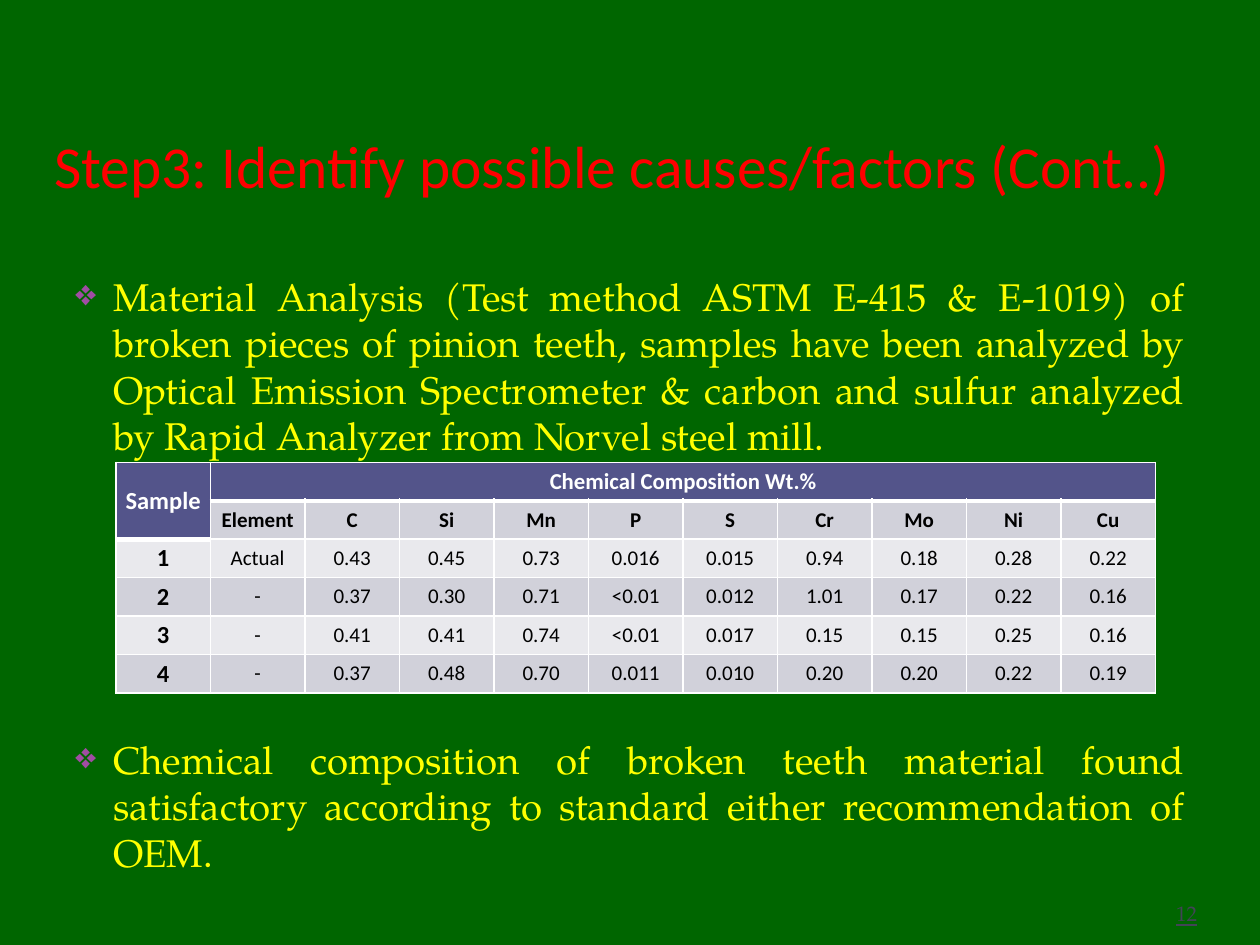
from lxml.etree import SubElement
from pptx import Presentation
from pptx.dml.color import RGBColor
from pptx.enum.text import MSO_ANCHOR, PP_ALIGN
from pptx.oxml.ns import qn
from pptx.util import Inches, Pt

HEADING_FONT = "Calibri"
BODY_FONT = "TeX Gyre Pagella"
HEADER_FILL, DARK_BAND, LIGHT_BAND = "53548A", "D1D1DA", "E9E9ED"

FINDINGS = [
    "Material Analysis (Test method ASTM E-415 & E-1019) of broken pieces of pinion teeth, "
    "samples have been analyzed by Optical Emission Spectrometer & carbon and sulfur "
    "analyzed by Rapid Analyzer from Norvel steel mill.",
    "Chemical composition of broken teeth material found satisfactory according to "
    "standard either recommendation of OEM.",
]
COMPOSITION = [
    ["Sample", "Chemical Composition Wt.%"] + [""] * 9,
    ["", "Element", "C", "Si", "Mn", "P", "S", "Cr", "Mo", "Ni", "Cu"],
    ["1", "Actual", "0.43", "0.45", "0.73", "0.016", "0.015", "0.94", "0.18", "0.28", "0.22"],
    ["2", "-", "0.37", "0.30", "0.71", "<0.01", "0.012", "1.01", "0.17", "0.22", "0.16"],
    ["3", "-", "0.41", "0.41", "0.74", "<0.01", "0.017", "0.15", "0.15", "0.25", "0.16"],
    ["4", "-", "0.37", "0.48", "0.70", "0.011", "0.010", "0.20", "0.20", "0.22", "0.19"],
]


def color(hex_string):
    return RGBColor.from_string(hex_string)


def format_paragraph(paragraph, font_name, size, hex_color, alignment, bold=False):
    paragraph.alignment = alignment
    for run in paragraph.runs:
        run.font.name = font_name
        run.font.size = Pt(size)
        run.font.bold = bold
        run.font.color.rgb = color(hex_color)


def add_text_frame(slide, left, top, width, height):
    shape = slide.shapes.add_textbox(Inches(left), Inches(top), Inches(width), Inches(height))
    shape.text_frame.word_wrap = True
    return shape.text_frame


def add_title(slide, text):
    text_frame = add_text_frame(slide, 0.33, 0.67, 9.17, 0.92)
    text_frame.margin_left = text_frame.margin_right = text_frame.margin_bottom = 0
    text_frame.vertical_anchor = MSO_ANCHOR.BOTTOM
    text_frame.text = text
    format_paragraph(text_frame.paragraphs[0], HEADING_FONT, 34, "FF0000", PP_ALIGN.CENTER)


def add_bullet(paragraph, character, hex_color):
    properties = paragraph._p.get_or_add_pPr()
    properties.set("marL", str(Inches(0.3)))
    properties.set("indent", str(-Inches(0.3)))
    bullet_color = SubElement(properties, qn("a:buClr"))
    SubElement(bullet_color, qn("a:srgbClr"), val=hex_color)
    SubElement(properties, qn("a:buSzPct"), val="95000")
    SubElement(properties, qn("a:buChar"), char=character)


def add_findings(slide, findings):
    """Bulleted text whose second item starts below the table."""
    text_frame = add_text_frame(slide, 0.5, 2.12, 9, 4.8)
    text_frame.text = "\n".join(findings)
    for paragraph in text_frame.paragraphs:
        format_paragraph(paragraph, BODY_FONT, 22, "FFFF00", PP_ALIGN.JUSTIFY)
    text_frame.paragraphs[1].space_before = Pt(159)
    for paragraph in text_frame.paragraphs:
        add_bullet(paragraph, "❖", "A04DA3")


def add_borders(cell, bottom_width):
    properties = cell._tc.get_or_add_tcPr()
    for side, width in (("L", 1), ("R", 1), ("T", 1), ("B", bottom_width)):
        line = SubElement(properties, qn(f"a:ln{side}"), w=str(Pt(width)))
        fill = SubElement(line, qn("a:solidFill"))
        SubElement(fill, qn("a:srgbClr"), val="FFFFFF")


def format_cell(cell, row, column):
    is_header = row == 0 or (row == 1 and column == 0)
    add_borders(cell, 3 if is_header else 1)
    band = DARK_BAND if row % 2 else LIGHT_BAND
    cell.fill.solid()
    cell.fill.fore_color.rgb = color(HEADER_FILL if is_header else band)
    cell.margin_left = cell.margin_right = Inches(0.07)
    cell.margin_top = cell.margin_bottom = 0
    cell.vertical_anchor = MSO_ANCHOR.MIDDLE
    size = 14 if column == 0 else 13 if row == 0 else 12
    format_paragraph(cell.text_frame.paragraphs[0], HEADING_FONT, size,
                     "FFFFFF" if is_header else "000000", PP_ALIGN.CENTER,
                     bold=row < 2 or column == 0)


def add_composition_table(slide, rows):
    column_count = len(rows[0])
    table = slide.shapes.add_table(len(rows), column_count, Inches(0.92), Inches(3.67),
                                   Inches(8.25), Inches(1.83)).table
    for column in table.columns:
        column.width = Inches(0.75)
    for row_index, values in enumerate(rows):
        for column_index, value in enumerate(values):
            cell = table.cell(row_index, column_index)
            cell.text = value
            format_cell(cell, row_index, column_index)
    table.cell(0, 0).merge(table.cell(1, 0))
    table.cell(0, 1).merge(table.cell(0, column_count - 1))


def add_slide_number(slide, number):
    text_frame = add_text_frame(slide, 8.6, 7.08, 1, 0.34)
    text_frame.vertical_anchor = MSO_ANCHOR.MIDDLE
    text_frame.text = number
    paragraph = text_frame.paragraphs[0]
    format_paragraph(paragraph, BODY_FONT, 12, "424456", PP_ALIGN.RIGHT)
    paragraph.runs[0].font.underline = True


def main():
    presentation = Presentation()
    presentation.slide_width, presentation.slide_height = Inches(10), Inches(7.5)
    slide = presentation.slides.add_slide(presentation.slide_layouts[6])
    slide.background.fill.solid()
    slide.background.fill.fore_color.rgb = color("006600")
    add_title(slide, "Step3: Identify possible causes/factors (Cont..) ")
    add_findings(slide, FINDINGS)
    add_composition_table(slide, COMPOSITION)
    add_slide_number(slide, "12")
    presentation.save("out.pptx")


if __name__ == "__main__":
    main()
